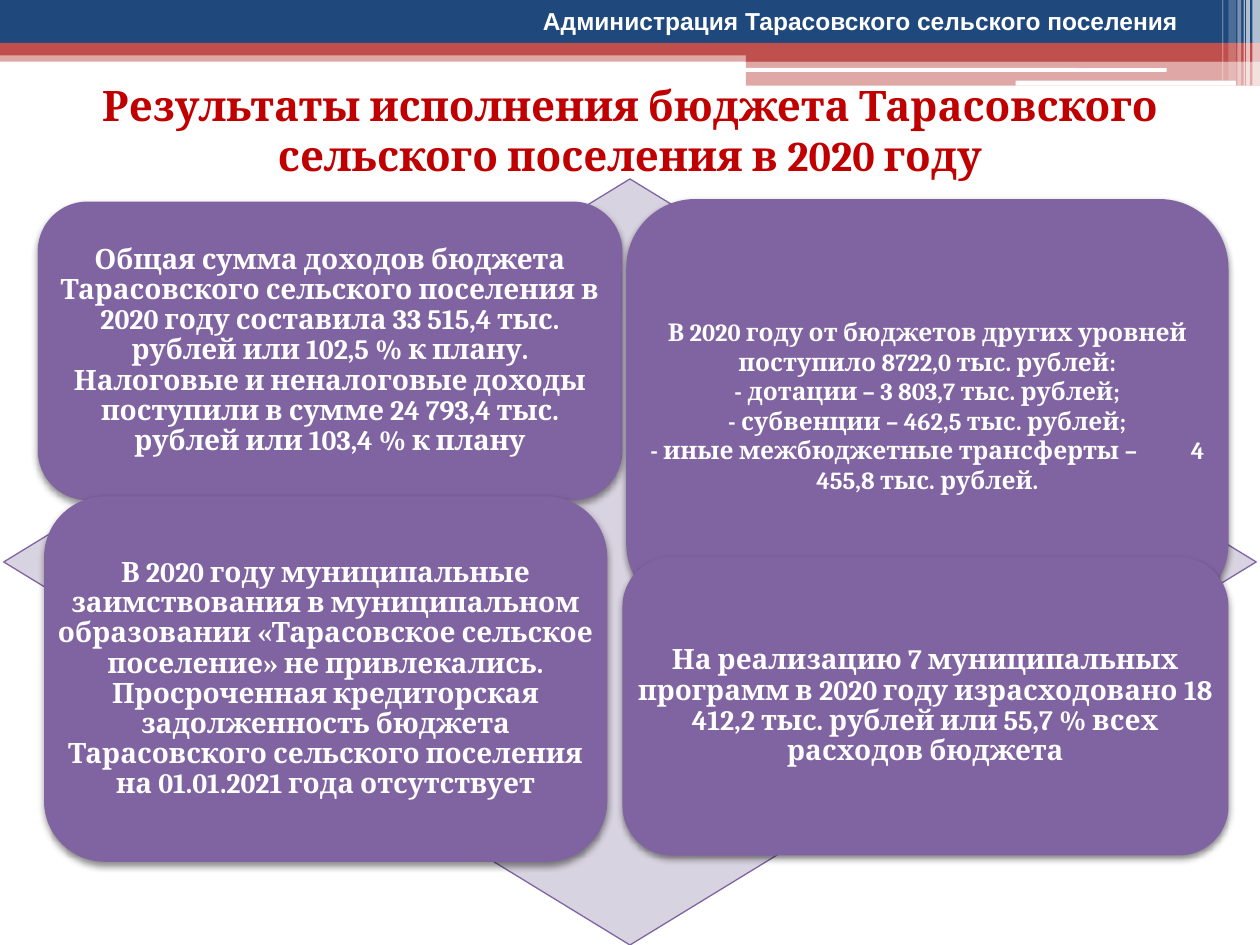
from dataclasses import dataclass

import pptx
import pptx.dml.color
import pptx.enum.shapes
import pptx.enum.text
import pptx.oxml
import pptx.oxml.ns
import pptx.util

SHAPE = pptx.enum.shapes.MSO_SHAPE
ANCHOR = pptx.enum.text.MSO_ANCHOR
NAMESPACE = pptx.oxml.ns.nsdecls("a")


@dataclass(frozen=True)
class Theme:
    navy: str = "1F497D"
    red: str = "C0504D"
    title_red: str = "C00000"
    purple: str = "8064A2"
    lilac: str = "D8D3E0"
    white: str = "FFFFFF"
    serif: str = "Cambria"
    sans: str = "Arial"
    title_size: int = 24
    card_size: int = 16
    small_size: int = 14


def rgb(color):
    return pptx.dml.color.RGBColor.from_string(color)


def write_text(frame, paragraphs, *, font, size, color, line_spacing=None, tab=None):
    """Fill a text frame with centred bold paragraphs; tab is a stop in inches."""
    for index, text in enumerate(paragraphs):
        paragraph = frame.paragraphs[0] if index == 0 else frame.add_paragraph()
        paragraph.alignment = pptx.enum.text.PP_ALIGN.CENTER
        if line_spacing:
            paragraph.line_spacing = line_spacing
        if tab and "\t" in text:
            position = pptx.util.Inches(tab)
            paragraph._p.get_or_add_pPr().append(pptx.oxml.parse_xml(
                f'<a:tabLst {NAMESPACE}><a:tab pos="{position}" algn="l"/></a:tabLst>'))
        run = paragraph.add_run()
        run.text = text
        run.font.name = font
        run.font.size = pptx.util.Pt(size)
        run.font.bold = True
        run.font.color.rgb = rgb(color)


class SlideBuilder:
    """Places elements on a grid of 100 columns by 75 rows."""

    COLUMNS, ROWS = 100, 75

    def __init__(self, presentation, theme):
        self.theme = theme
        self.column = presentation.slide_width / self.COLUMNS
        self.row = presentation.slide_height / self.ROWS
        self.slide = presentation.slides.add_slide(presentation.slide_layouts[6])

    def area(self, left, top, width, height):
        return (round(left * self.column), round(top * self.row),
                round(width * self.column), round(height * self.row))

    def shape(self, kind, place, fill, opacity=100, line=None):
        shape = self.slide.shapes.add_shape(kind, *self.area(*place))
        shape.shadow.inherit = False
        shape.fill.solid()
        shape.fill.fore_color.rgb = rgb(fill)
        if opacity < 100:
            color = shape._element.spPr.find(".//" + pptx.oxml.ns.qn("a:srgbClr"))
            color.append(pptx.oxml.parse_xml(
                f'<a:alpha {NAMESPACE} val="{opacity * 1000}"/>'))
        if line:
            shape.line.color.rgb = rgb(line)
            shape.line.width = pptx.util.Pt(0.75)
        else:
            shape.line.fill.background()
        return shape

    def text(self, place, paragraphs, inset=None, anchor=ANCHOR.TOP, **text_format):
        frame = self.slide.shapes.add_textbox(*self.area(*place)).text_frame
        frame.word_wrap = True
        frame.vertical_anchor = anchor
        if inset is not None:
            frame.margin_left = frame.margin_right = pptx.util.Inches(inset)
            frame.margin_top = frame.margin_bottom = pptx.util.Inches(inset)
        write_text(frame, paragraphs, **text_format)

    def card(self, place, paragraphs, size, inset=0.07, line_spacing=0.9, tab=None):
        """Rounded card with a soft shadow and text across its full width."""
        shape = self.shape(SHAPE.ROUNDED_RECTANGLE, place, self.theme.purple)
        effects = shape._element.spPr.find(pptx.oxml.ns.qn("a:effectLst"))
        effects.append(pptx.oxml.parse_xml(
            f'<a:outerShdw {NAMESPACE} blurRad="{pptx.util.Pt(4)}" '
            f'dist="{pptx.util.Pt(2)}" dir="5400000" rotWithShape="0">'
            '<a:srgbClr val="000000"><a:alpha val="45000"/></a:srgbClr></a:outerShdw>'))
        self.text(place, paragraphs, inset, ANCHOR.MIDDLE, font=self.theme.serif,
                  size=size, color=self.theme.white, line_spacing=line_spacing, tab=tab)

    def header_band(self):
        theme = self.theme
        bars = [
            ((0, 4, 100, 0.9), theme.red, 50),
            ((0, 0, 100, 3.4), theme.navy, 100),
            ((0, 3.4, 100, 1), theme.red, 100),
            ((59.2, 3.9, 40.8, 1), theme.red, 100),
            ((59.2, 4.8, 40.8, 2), theme.red, 50),
        ]
        for place, color, opacity in bars:
            self.shape(SHAPE.RECTANGLE, place, color, opacity)
        for place in [(59.1, 5.4, 33.5, 0.3), (80.6, 6.4, 17.5, 0.4)]:
            self.shape(SHAPE.ROUNDED_RECTANGLE, place, theme.white)
        stripes = [(99.4, 0.6, 6.8, 65), (98.9, 0.3, 6.8, 65), (98.7, 0.1, 6.8, 60),
                   (98.2, 0.3, 6.8, 40), (97.5, 0.6, 6.4, 20), (97, 0.1, 6.4, 30)]
        for left, width, height, opacity in stripes:
            self.shape(SHAPE.RECTANGLE, (left, 0, width, height), theme.white, opacity)


def main():
    theme = Theme()
    presentation = pptx.Presentation()
    presentation.slide_width = pptx.util.Inches(10)
    presentation.slide_height = pptx.util.Inches(7.5)
    builder = SlideBuilder(presentation, theme)

    builder.header_band()
    builder.shape(SHAPE.DIAMOND, (0.3, 14.2, 99.4, 60.8), theme.lilac, line=theme.purple)

    builder.card((3, 16, 46.4, 23.7), [
        "Общая сумма доходов бюджета Тарасовского сельского поселения в 2020 году "
        "составила 33 515,4 тыс. рублей или 102,5 % к плану.",
        "Налоговые и неналоговые доходы поступили в сумме 24 793,4 тыс. рублей "
        "или 103,4 % к плану",
    ], theme.card_size)
    builder.card((49.7, 15.8, 47.8, 32.8), [
        "В 2020 году от бюджетов других уровней поступило 8722,0 тыс. рублей:",
        "- дотации – 3 803,7 тыс. рублей;",
        "- субвенции – 462,5 тыс. рублей;",
        "- иные межбюджетные трансферты –\t4 455,8 тыс. рублей.",
    ], theme.small_size, inset=0.06, line_spacing=None, tab=4.29)
    builder.card((3.5, 39.4, 44.7, 29), [
        "В 2020 году муниципальные заимствования в муниципальном образовании "
        "«Тарасовское сельское поселение» не привлекались.",
        "Просроченная кредиторская задолженность бюджета Тарасовского сельского "
        "поселения на 01.01.2021 года отсутствует",
    ], theme.card_size)
    builder.card((49.4, 44.2, 48.1, 23.7), [
        "На реализацию 7 муниципальных программ в 2020 году израсходовано "
        "18 412,2 тыс. рублей или 55,7 % всех расходов бюджета",
    ], theme.card_size)

    builder.text((0, 5.8, 100, 9.1), [
        "Результаты исполнения бюджета Тарасовского сельского поселения в 2020 году",
    ], font=theme.serif, size=theme.title_size, color=theme.title_red)
    builder.text((36.6, 0, 63.4, 3.4), [
        "Администрация Тарасовского сельского поселения",
    ], font=theme.sans, size=theme.small_size, color=theme.white)

    presentation.save("out.pptx")


if __name__ == "__main__":
    main()
